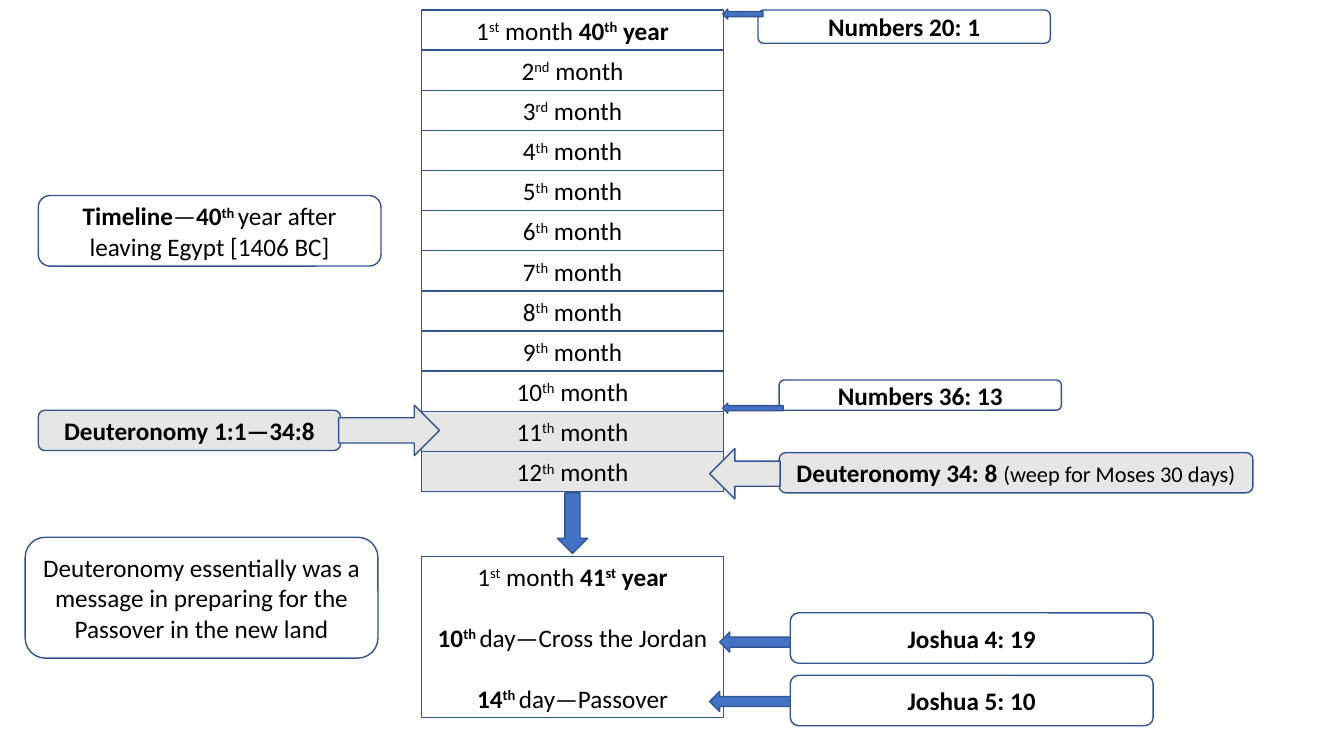
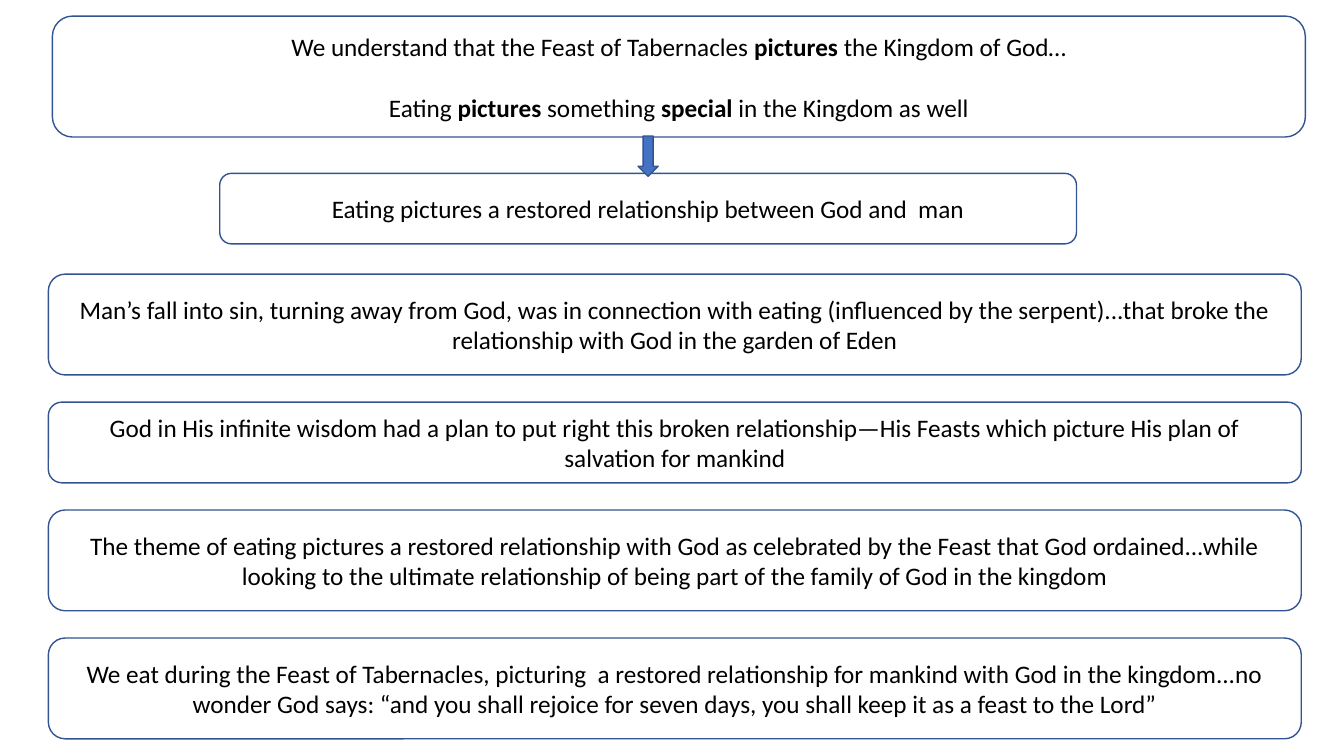
from pptx import Presentation
from pptx.dml.color import RGBColor
from pptx.enum.shapes import MSO_SHAPE
from pptx.enum.text import MSO_ANCHOR, PP_ALIGN
from pptx.util import Inches, Pt

WHITE, GREY, BLUE, NAVY, BLACK = "FFFFFF", "E7E6E6", "4472C4", "325491", "000000"
RECT, ROUND = MSO_SHAPE.RECTANGLE, MSO_SHAPE.ROUNDED_RECTANGLE
LEFT, RIGHT, DOWN = MSO_SHAPE.LEFT_ARROW, MSO_SHAPE.RIGHT_ARROW, MSO_SHAPE.DOWN_ARROW


def cells(count):
    """Length of a number of grid cells, ten to the inch."""
    return Inches(count / 10)


def tint(code):
    return RGBColor.from_string(code)


class Deck:
    """Holds the style and the current slide; places are (col, row, cols, rows)."""
    font, size, gap = "Calibri", 18, 22

    def __init__(self):
        self.prs = Presentation()
        self.prs.slide_width = cells(133.33)
        self.prs.slide_height = cells(75)

    def page(self):
        self.slide = self.prs.slides.add_slide(self.prs.slide_layouts[6])

    def shape(self, kind, place, fill):
        item = self.slide.shapes.add_shape(kind, *map(cells, place))
        item.shadow.inherit = False
        item.fill.solid()
        item.fill.fore_color.rgb = tint(fill)
        item.line.color.rgb = tint(NAVY)
        item.line.width = Pt(1)
        return item

    def arrow(self, kind, place, fill=BLUE):
        self.shape(kind, place, fill)

    def box(self, place, *lines, fill=WHITE, kind=ROUND):
        """Each line is a list of runs; every line after the first stands apart."""
        frame = self.shape(kind, place, fill).text_frame
        frame.word_wrap = True
        frame.vertical_anchor = MSO_ANCHOR.MIDDLE
        for i, runs in enumerate(lines):
            para = frame.add_paragraph() if i else frame.paragraphs[0]
            para.alignment = PP_ALIGN.CENTER
            if i:
                para.space_before = Pt(self.gap)
            for run in runs:
                self.run(para, *run)

    def run(self, para, text, style="", size=None):
        """Style letters: b for bold, s for superscript."""
        run = para.add_run()
        run.text = text
        font = run.font
        font.name, font.size = self.font, Pt(size or self.size)
        font.bold = "b" in style
        font.color.rgb = tint(BLACK)
        if "s" in style:
            run._r.get_or_add_rPr().set("baseline", "30000")


def month(num, year=None):
    """Runs such as 1st month 40th year."""
    end = {1: "st", 2: "nd", 3: "rd"}.get(num, "th")
    runs = [(str(num),), (end, "s"), (" month",)]
    if year:
        runs += [(" ",), (year[:2], "b"), (year[2:], "bs"), (" year", "b")]
    return runs


def day(num, event):
    return [(num, "b"), ("th ", "bs"), ("day—" + event,)]


def timeline(deck):
    deck.page()
    col, wide, top, step = 41.8, 30, 1, 3.98
    for num in range(1, 13):
        deck.box((col, top + (num - 1) * step, wide, 4),
                 month(num, "40th" if num == 1 else None),
                 fill=GREY if num > 10 else WHITE, kind=RECT)
    deck.box((col, 55.2, wide, 16), month(1, "41st"),
             day("10", "Cross the Jordan"), day("14", "Passover"), kind=RECT)

    verses = [
        ((75.2, 1, 29, 3.3), "Numbers 20: 1"),
        ((77.3, 37.7, 28, 3), "Numbers 36: 13"),
        ((78.4, 60.8, 36, 5), "Joshua 4: 19"),
        ((78.4, 67, 36, 5), "Joshua 5: 10"),
    ]
    for place, verse in verses:
        deck.box(place, [(verse, "b")])
    deck.box((3.8, 40.7, 30, 4), [("Deuteronomy 1:1—34:8", "b")], fill=GREY)
    deck.box((77.3, 44.9, 47, 4), [("Deuteronomy 34: 8 ", "b"),
             ("(weep for Moses 30 days)", "", 16)], fill=GREY)
    deck.box((3.8, 19.4, 34, 7), [("Timeline", "b"), ("—",), ("40", "b"),
             ("th ", "bs"), ("year after leaving Egypt [1406 BC]",)])
    deck.box((2.5, 53.3, 35, 12), [("Deuteronomy essentially was a message in "
             "preparing for the Passover in the new land",)])

    for place in [(71.7, 0.9, 4, 1), (71.7, 40, 6, 1),
                  (71.4, 62.7, 7, 2), (70.4, 68.6, 8, 2)]:
        deck.arrow(LEFT, place)
    deck.arrow(DOWN, (55.3, 48.9, 3, 6))
    deck.arrow(RIGHT, (33.6, 40.2, 10, 5), GREY)
    deck.arrow(LEFT, (70.4, 44.5, 7, 5), GREY)


def feast(deck):
    deck.page()
    wide, gap = 124.3, 2.7
    deck.box((5.2, 1.6, wide, 12),
             [("We understand that the Feast of Tabernacles ",),
              ("pictures", "b"), (" the Kingdom of God…",)],
             [("Eating ",), ("pictures", "b"), (" something ",),
              ("special", "b"), (" in the Kingdom as well",)])
    deck.box((21.8, 17.2, 85, 7),
             [("Eating pictures a restored relationship between God and  man",)])
    deck.arrow(DOWN, (63.3, 13.5, 2, 4))

    points = [
        (10, "Man’s fall into sin, turning away from God, was in connection with "
             "eating (influenced by the serpent)...that broke the relationship "
             "with God in the garden of Eden"),
        (8, "God in His infinite wisdom had a plan to put right this broken "
            "relationship—His Feasts which picture His plan of salvation for "
            "mankind"),
        (10, "The theme of eating pictures a restored relationship with God as "
             "celebrated by the Feast that God ordained...while looking to the "
             "ultimate relationship of being part of the family of God in the "
             "kingdom"),
        (10, "We eat during the Feast of Tabernacles, picturing  a restored "
             "relationship for mankind with God in the kingdom...no wonder God "
             "says: “and you shall rejoice for seven days, you shall keep it as "
             "a feast to the Lord”"),
    ]
    row = 27.2
    for high, text in points:
        deck.box((4.8, row, wide, high), [(text,)])
        row += high + gap


def main():
    deck = Deck()
    timeline(deck)
    feast(deck)
    deck.prs.save("out.pptx")


if __name__ == "__main__":
    main()
